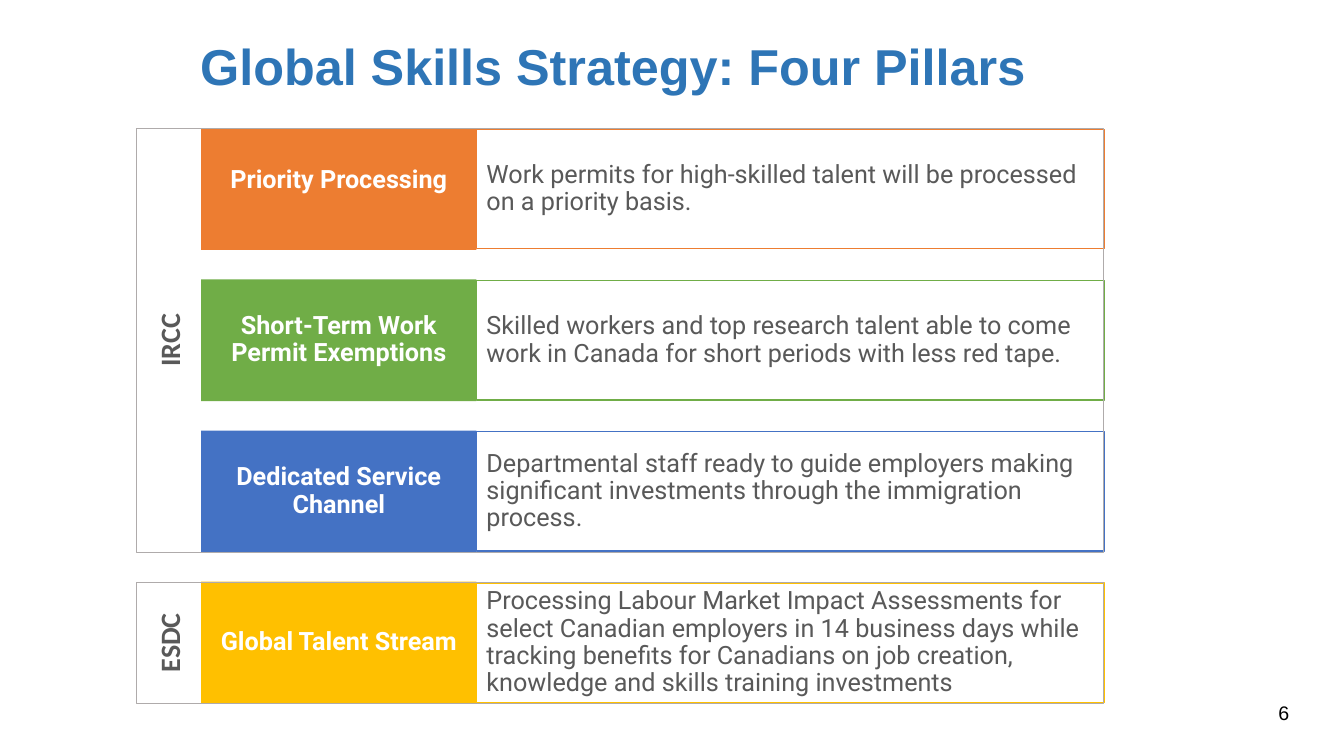
from pptx import Presentation
from pptx.dml.color import RGBColor
from pptx.enum.shapes import MSO_SHAPE
from pptx.enum.text import MSO_ANCHOR, PP_ALIGN
from pptx.util import Cm, Pt

WHITE = RGBColor(0xFF, 0xFF, 0xFF)
BLACK = RGBColor(0x00, 0x00, 0x00)
TITLE_BLUE = RGBColor(0x2E, 0x75, 0xB6)
TEXT_GRAY = RGBColor(0x59, 0x59, 0x59)
FRAME_GRAY = RGBColor(0xAF, 0xAB, 0xAB)
ORANGE = RGBColor(0xED, 0x7D, 0x31)
GREEN = RGBColor(0x70, 0xAD, 0x47)
BLUE = RGBColor(0x44, 0x72, 0xC4)
YELLOW = RGBColor(0xFF, 0xC0, 0x00)

TITLE = "Global Skills Strategy: Four Pillars"
PAGE_NUMBER = "6"
# name, description, colour, lift of the name above the middle in cm
PILLARS = [
    ("Priority Processing",
     "Work permits for high-skilled talent will be processed on a priority basis.",
     ORANGE, 0.22),
    ("Short-Term Work Permit Exemptions",
     "Skilled workers and top research talent able to come work in Canada "
     "for short periods with less red tape.",
     GREEN, 0),
    ("Dedicated Service Channel",
     "Departmental staff ready to guide employers making significant "
     "investments through the immigration process.",
     BLUE, 0),
    ("Global Talent Stream",
     "Processing Labour Market Impact Assessments for select Canadian employers "
     "in 14 business days while tracking benefits for Canadians on job creation, "
     "knowledge and skills training investments",
     YELLOW, 0),
]
# department, first pillar, number of pillars
DEPARTMENTS = [("IRCC", 0, 3), ("ESDC", 3, 1)]

TOP, PITCH, ROW_HEIGHT = 3.23, 3.81, 3.07
NAME_LEFT, NAME_WIDTH = 5.07, 6.94
DESCRIPTION_LEFT, DESCRIPTION_WIDTH = 12.01, 15.82
DESCRIPTION_INSET = 0.03
FRAME_LEFT, FRAME_WIDTH = 3.43, 24.38
TAG_CENTER, TAG_WIDTH, TAG_HEIGHT = 4.26, 2.03, 1.12


def write(shape, text, font_name, size, color, bold=False,
          align=PP_ALIGN.LEFT, anchor=MSO_ANCHOR.MIDDLE, line_spacing=0.9):
    frame = shape.text_frame
    frame.word_wrap = True
    frame.vertical_anchor = anchor
    paragraph = frame.paragraphs[0]
    paragraph.text = text
    paragraph.alignment = align
    paragraph.line_spacing = line_spacing
    font = paragraph.font
    font.name, font.size, font.bold = font_name, Pt(size), bold
    font.color.rgb = color


def add_box(slide, left, top, width, height, fill=None, line=None, line_width=1):
    shape = slide.shapes.add_shape(
        MSO_SHAPE.RECTANGLE, Cm(left), Cm(top), Cm(width), Cm(height))
    shape.shadow.inherit = False
    if fill is None:
        shape.fill.background()
    else:
        shape.fill.solid()
        shape.fill.fore_color.rgb = fill
    if line is None:
        shape.line.fill.background()
    else:
        shape.line.color.rgb = line
        shape.line.width = Pt(line_width)
    return shape


def add_pillar(slide, row, name, description, color, lift):
    top = TOP + row * PITCH
    name_box = add_box(slide, NAME_LEFT, top, NAME_WIDTH, ROW_HEIGHT, fill=color)
    write(name_box, name, "Roboto", 18, WHITE, bold=True, align=PP_ALIGN.CENTER)
    name_box.text_frame.margin_bottom = Cm(0.13 + 2 * lift)
    description_box = add_box(
        slide, DESCRIPTION_LEFT, top + DESCRIPTION_INSET,
        DESCRIPTION_WIDTH, ROW_HEIGHT - 2 * DESCRIPTION_INSET, line=color)
    write(description_box, description, "Roboto", 18, TEXT_GRAY)


def add_department(slide, name, first, count):
    """Frame the department's pillars and set its name sideways at the left."""
    top = TOP + first * PITCH
    height = (count - 1) * PITCH + ROW_HEIGHT
    add_box(slide, FRAME_LEFT, top, FRAME_WIDTH, height,
            line=FRAME_GRAY, line_width=0.25)
    tag = slide.shapes.add_textbox(
        Cm(TAG_CENTER - TAG_WIDTH / 2), Cm(top + height / 2 - TAG_HEIGHT / 2),
        Cm(TAG_WIDTH), Cm(TAG_HEIGHT))
    tag.rotation = 270
    write(tag, name, "Calibri", 20, TEXT_GRAY, bold=True,
          align=PP_ALIGN.CENTER, line_spacing=1.0)


def main():
    presentation = Presentation()
    presentation.slide_width, presentation.slide_height = Cm(33.87), Cm(19.05)
    slide = presentation.slides.add_slide(presentation.slide_layouts[6])

    title = slide.shapes.add_textbox(Cm(3.43), Cm(0.94), Cm(24.05), Cm(1.73))
    write(title, TITLE, "Arial", 36, TITLE_BLUE, bold=True,
          align=PP_ALIGN.CENTER, anchor=MSO_ANCHOR.TOP)
    for row, pillar in enumerate(PILLARS):
        add_pillar(slide, row, *pillar)
    for department in DEPARTMENTS:
        add_department(slide, *department)
    number = slide.shapes.add_textbox(Cm(28.07), Cm(17.53), Cm(4.67), Cm(0.86))
    write(number, PAGE_NUMBER, "Arial", 14, BLACK,
          align=PP_ALIGN.RIGHT, line_spacing=1.0)

    presentation.save("out.pptx")


if __name__ == "__main__":
    main()
